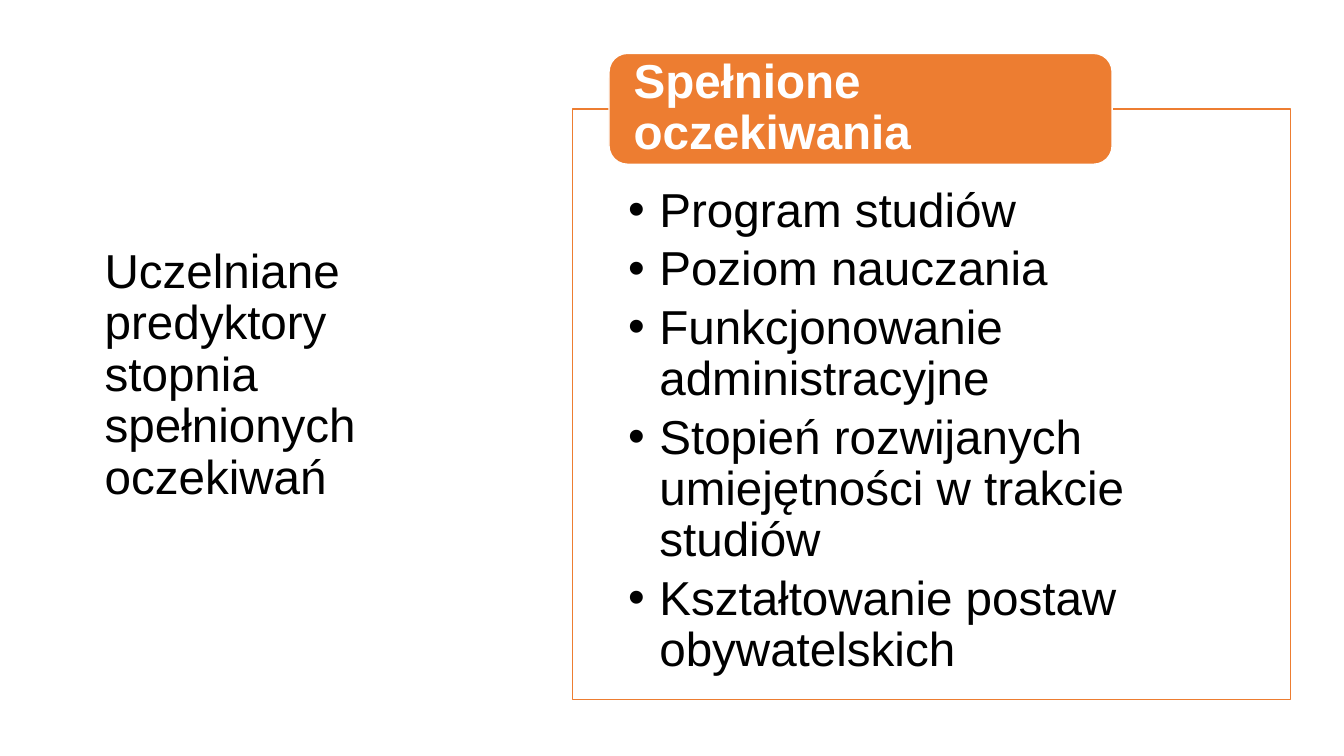
from lxml.etree import SubElement
from pptx import Presentation
from pptx.dml.color import RGBColor
from pptx.enum.shapes import MSO_SHAPE
from pptx.enum.text import MSO_ANCHOR, PP_ALIGN
from pptx.oxml.ns import qn
from pptx.util import Inches, Pt


def color(value):
    return RGBColor.from_string(value)


def write_text(shape, lines, ink="000000", bold=False, bullet=False,
               anchor=MSO_ANCHOR.MIDDLE, insets=(0.1, 0.05, 0.1, 0.05),
               font="Arial", size=34, space_after=0):
    frame = shape.text_frame
    frame.word_wrap = True
    frame.vertical_anchor = anchor
    (frame.margin_left, frame.margin_top,
     frame.margin_right, frame.margin_bottom) = map(Inches, insets)
    for index, line in enumerate(lines):
        para = frame.add_paragraph() if index else frame.paragraphs[0]
        para.alignment = PP_ALIGN.LEFT
        para.line_spacing = 0.9
        para.space_after = Pt(space_after)
        if bullet:
            properties = para._p.get_or_add_pPr()
            properties.set("marL", str(Inches(0.31)))
            properties.set("indent", str(Inches(-0.31)))
            SubElement(properties, qn("a:buFont"), typeface=font)
            SubElement(properties, qn("a:buChar"), char="•")
        span = para.add_run()
        span.text = line
        span.font.name = font
        span.font.size = Pt(size)
        span.font.bold = bold
        span.font.color.rgb = color(ink)


class SlideBuilder:
    accent = "ED7D31"
    paper = "FFFFFF"

    def __init__(self, slide):
        self.slide = slide

    def text_box(self, place, lines, **style):
        box = self.slide.shapes.add_textbox(*map(Inches, place))
        write_text(box, lines, **style)

    def panel(self, kind, place, fill, line, lines, opacity=100, **style):
        box = self.slide.shapes.add_shape(kind, *map(Inches, place))
        box.shadow.inherit = False
        box.fill.solid()
        box.fill.fore_color.rgb = color(fill)
        if opacity < 100:
            fill_color = box._element.spPr.find(qn("a:solidFill"))[0]
            SubElement(fill_color, qn("a:alpha"), val=str(opacity * 1000))
        box.line.color.rgb = color(line)
        box.line.width = Pt(1)
        write_text(box, lines, **style)


def main():
    deck = Presentation()
    deck.slide_width, deck.slide_height = Inches(13.33), Inches(7.5)
    page = SlideBuilder(deck.slides.add_slide(deck.slide_layouts[6]))

    page.text_box((0.94, 1.11, 3.74, 5.24),
                  ["Uczelniane predyktory stopnia spełnionych oczekiwań"])
    predictors = [
        "Program studiów",
        "Poziom nauczania",
        "Funkcjonowanie administracyjne",
        "Stopień rozwijanych umiejętności w trakcie studiów",
        "Kształtowanie postaw obywatelskich",
    ]
    page.panel(MSO_SHAPE.RECTANGLE, (5.68, 1.08, 7.12, 5.86),
               page.paper, page.accent, predictors, opacity=90, bullet=True,
               anchor=MSO_ANCHOR.TOP, insets=(0.55, 0.77, 0.55, 0.26),
               space_after=5)
    page.panel(MSO_SHAPE.ROUNDED_RECTANGLE, (6.04, 0.53, 4.99, 1.1),
               page.accent, page.paper, ["Spełnione oczekiwania"],
               ink=page.paper, bold=True, insets=(0.19, 0, 0.19, 0))
    deck.save("out.pptx")


if __name__ == "__main__":
    main()
